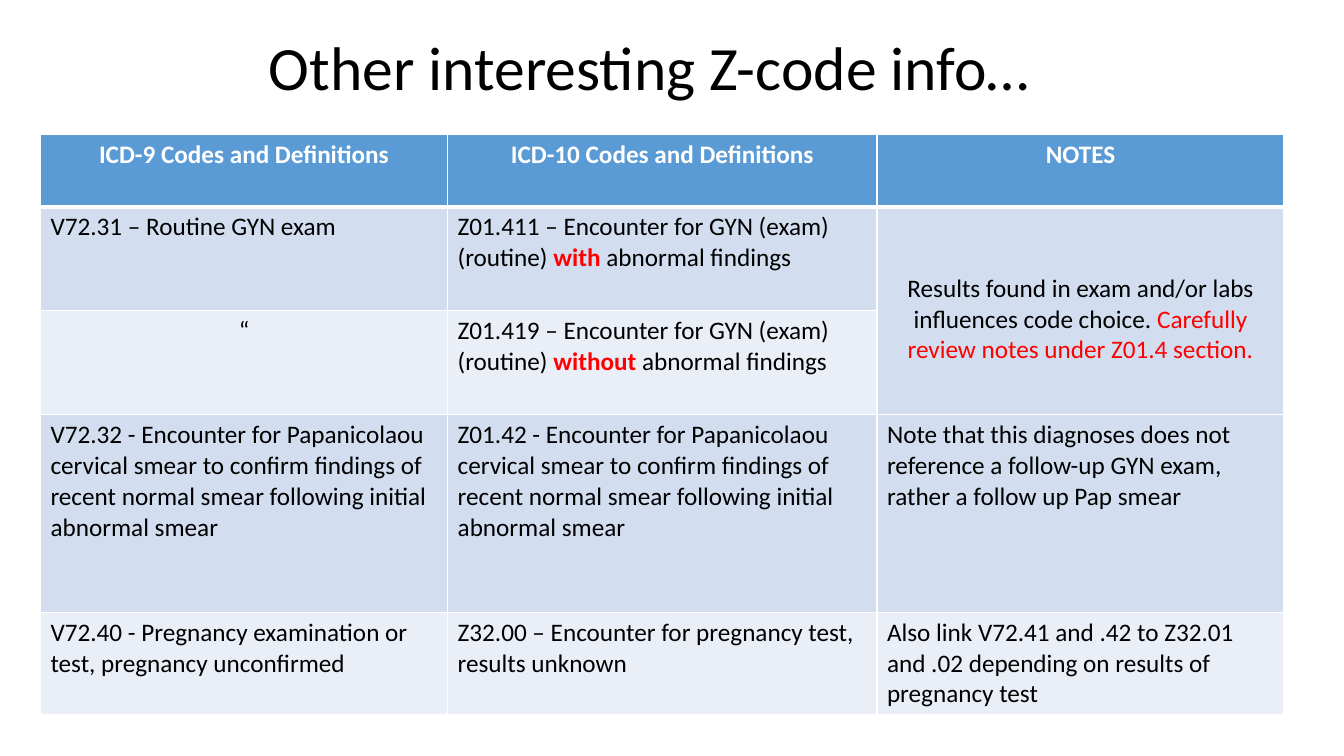
from dataclasses import dataclass

from lxml.etree import SubElement
from pptx import Presentation
from pptx.dml.color import RGBColor
from pptx.enum.text import MSO_ANCHOR, PP_ALIGN
from pptx.oxml.ns import qn
from pptx.util import Cm, Pt


@dataclass(frozen=True)
class Theme:
    font: str = "Calibri"
    title_size: int = 44
    table_size: int = 18
    text: str = "000000"
    alert: str = "FF0000"
    white: str = "FFFFFF"
    header: str = "5B9BD5"
    bands: tuple = ("D2DEEF", "EAEFF7")


theme = Theme()


def add_run(paragraph, text, size, color=theme.text, bold=False):
    run = paragraph.add_run()
    run.text = text
    run.font.name = theme.font
    run.font.size = Pt(size)
    run.font.bold = bold
    run.font.color.rgb = RGBColor.from_string(color)


def set_borders(cell, widths):
    """Draw white borders; widths are points for left, right, top, bottom."""
    properties = cell._tc.get_or_add_tcPr()
    for position, (side, width) in enumerate(zip("LRTB", widths)):
        line = SubElement(properties, qn(f"a:ln{side}"), w=str(Pt(width)))
        fill = SubElement(line, qn("a:solidFill"))
        SubElement(fill, qn("a:srgbClr"), val=theme.white)
        properties.insert(position, line)


presentation = Presentation()
presentation.slide_width = Cm(33.87)
presentation.slide_height = Cm(19.05)
slide = presentation.slides.add_slide(presentation.slide_layouts[6])

# Title
title = slide.shapes.add_textbox(Cm(6.53), Cm(0.66), Cm(24.79), Cm(2.24)).text_frame
title.word_wrap = True
title.vertical_anchor = MSO_ANCHOR.MIDDLE
title.paragraphs[0].line_spacing = 0.9
add_run(title.paragraphs[0], "Other interesting Z-code info…", theme.title_size)

# Code comparison: each cell is a list of (text, color, bold) runs
headings = ["ICD-9 Codes and Definitions", "ICD-10 Codes and Definitions", "NOTES"]
pap_smear = ("Encounter for Papanicolaou cervical smear to confirm findings of "
             "recent normal smear following initial abnormal smear")


def plain(text):
    return [(text, theme.text, False)]


code_rows = [
    [[(heading, theme.white, True)] for heading in headings],
    [plain("V72.31 – Routine GYN exam"),
     plain("Z01.411 – Encounter for GYN (exam)(routine) ")
     + [("with ", theme.alert, True)] + plain("abnormal findings"),
     plain("Results found in exam and/or labs influences code choice. ")
     + [("Carefully review notes under Z01.4 section.", theme.alert, False)]],
    [plain("“"),
     plain("Z01.419 – Encounter for GYN (exam)(routine) ")
     + [("without ", theme.alert, True)] + plain("abnormal findings"),
     []],
    [plain(f"V72.32 - {pap_smear}"),
     plain(f"Z01.42 - {pap_smear}"),
     plain("Note that this diagnoses does not reference a follow-up GYN exam, "
           "rather a follow up Pap smear")],
    [plain("V72.40 - Pregnancy examination or test, pregnancy unconfirmed"),
     plain("Z32.00 – Encounter for pregnancy test, results unknown"),
     plain("Also link V72.41 and .42 to Z32.01 and .02 depending on results of "
           "pregnancy test")],
]
column_widths = [10.26, 10.82, 10.26]
row_heights = [1.83, 2.62, 2.62, 4.98, 2.57]
centered = {(0, 0), (0, 1), (0, 2), (1, 2), (2, 0)}

codes = slide.shapes.add_table(
    len(row_heights), len(column_widths), Cm(1.02), Cm(3.38),
    Cm(sum(column_widths)), Cm(sum(row_heights))).table
for column, width in zip(codes.columns, column_widths):
    column.width = Cm(width)
for row, height in zip(codes.rows, row_heights):
    row.height = Cm(height)

for r, code_row in enumerate(code_rows):
    background = theme.bands[(r - 1) % 2] if r else theme.header
    for c, runs in enumerate(code_row):
        cell = codes.cell(r, c)
        cell.fill.solid()
        cell.fill.fore_color.rgb = RGBColor.from_string(background)
        set_borders(cell, (1, 1, 3 if r == 1 else 1, 3 if r == 0 else 1))
        paragraph = cell.text_frame.paragraphs[0]
        if (r, c) in centered:
            paragraph.alignment = PP_ALIGN.CENTER
        for text, color, bold in runs:
            add_run(paragraph, text, theme.table_size, color, bold)

# The exam note spans both GYN exam rows and sits lower in its cell
exam_note = codes.cell(1, 2)
exam_note.merge(codes.cell(2, 2))
exam_note.margin_top = Cm(1.68)

presentation.save("out.pptx")
